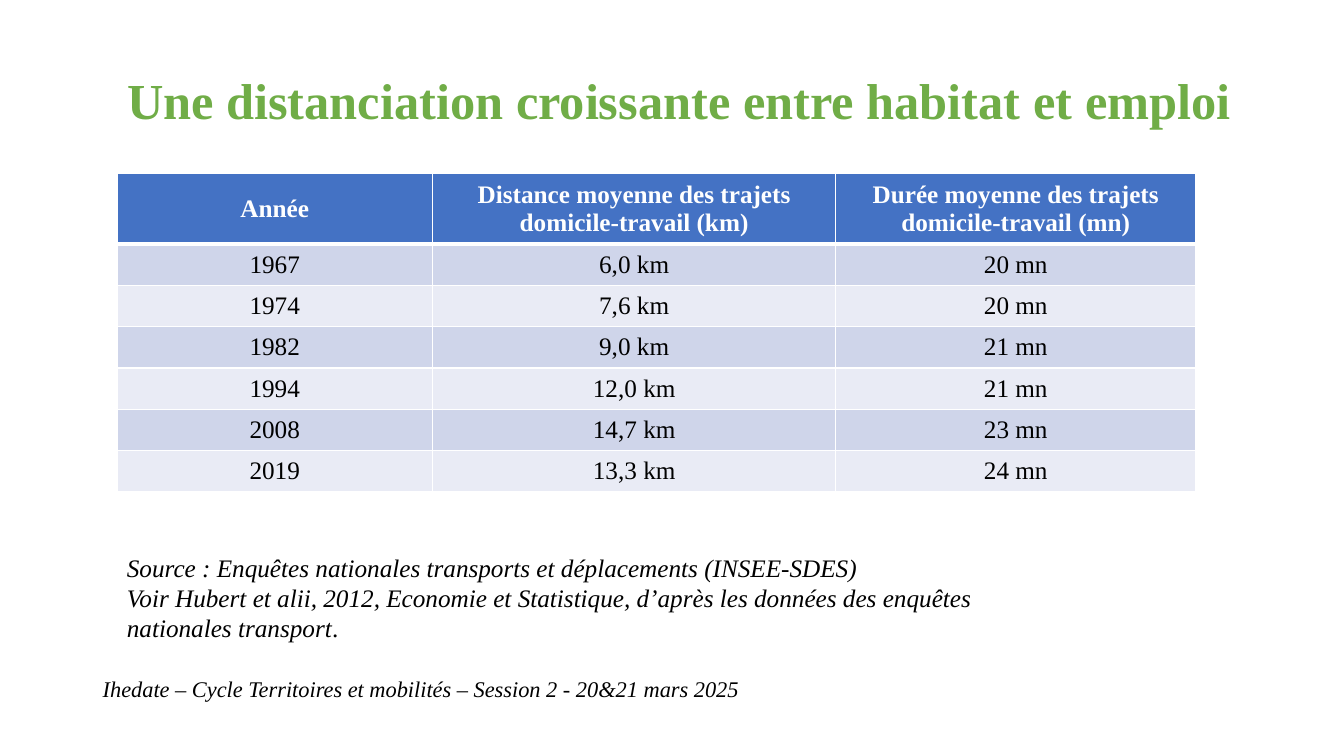
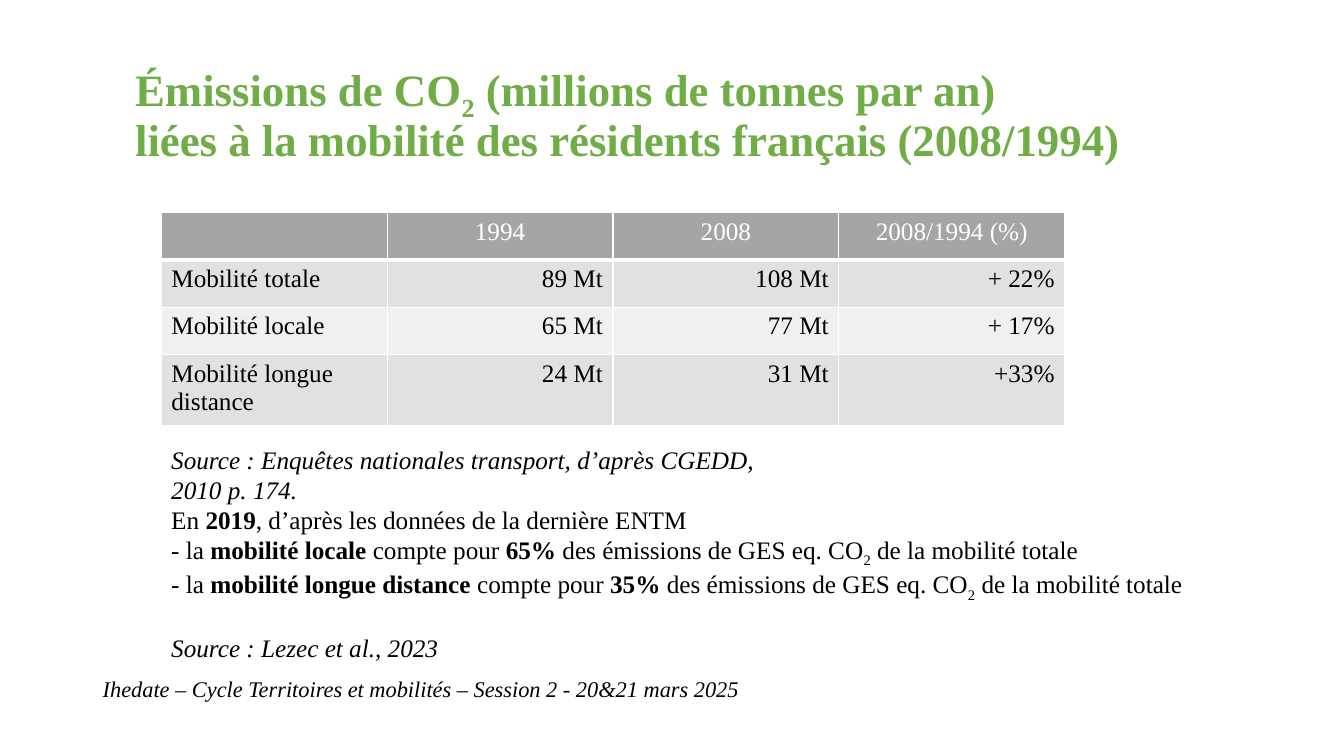
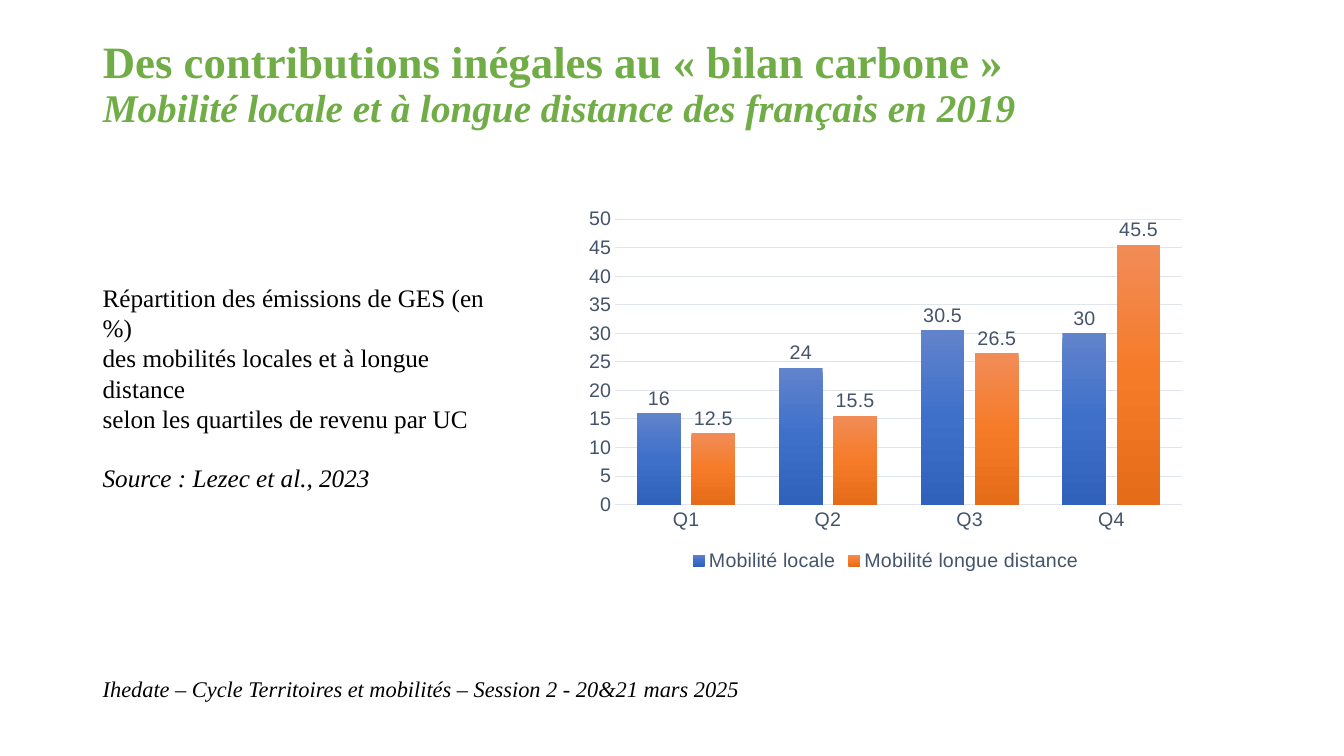
from lxml.etree import SubElement
from pptx import Presentation
from pptx.chart.data import CategoryChartData
from pptx.dml.color import RGBColor
from pptx.enum.chart import XL_CHART_TYPE as ChartType
from pptx.enum.chart import XL_LABEL_POSITION as LabelPosition
from pptx.enum.chart import XL_LEGEND_POSITION as LegendPosition
from pptx.enum.chart import XL_TICK_MARK as TickMark
from pptx.enum.text import MSO_ANCHOR as Anchor
from pptx.enum.text import MSO_AUTO_SIZE as AutoSize
from pptx.enum.text import PP_ALIGN as Align
from pptx.oxml.ns import qn
from pptx.util import Inches, Pt

# Shared look
SERIF, SANS = "Times New Roman", "Arial"
BLACK = RGBColor(0x00, 0x00, 0x00)
WHITE = RGBColor(0xFF, 0xFF, 0xFF)
GREEN = RGBColor(0x70, 0xAD, 0x47)
SLATE = RGBColor(0x44, 0x54, 0x6A)
GRID = RGBColor(0xE0, 0xE5, 0xEB)
# Table palettes: header, odd rows, even rows
BLUES = (RGBColor(0x44, 0x72, 0xC4), RGBColor(0xCF, 0xD5, 0xEA), RGBColor(0xE9, 0xEB, 0xF5))
GREYS = (RGBColor(0xA5, 0xA5, 0xA5), RGBColor(0xE1, 0xE1, 0xE1), RGBColor(0xF0, 0xF0, 0xF0))
# Series gradients, from top to bottom
BLUE_STOPS = (RGBColor(0x61, 0x83, 0xCB), RGBColor(0x3E, 0x70, 0xCA), RGBColor(0x30, 0x62, 0xBB))
ORANGE_STOPS = (RGBColor(0xF1, 0x8C, 0x57), RGBColor(0xF6, 0x7B, 0x28), RGBColor(0xE5, 0x6C, 0x19))

BODY_SIZE = 18
BLANK_LINE = Pt(21)
BOLD, ITALIC, SUBSCRIPT = {"bold": True}, {"italic": True}, {"baseline": -25000}
FOOTER = "Ihedate – Cycle Territoires et mobilités – Session 2 - 20&21 mars 2025"
STUDY = "Source : Lezec et al., 2023"


def set_font(font, size, color, name=SERIF, bold=False, italic=False):
    font.name, font.size, font.bold, font.italic = name, Pt(size), bold, italic
    font.color.rgb = color


def write_runs(paragraph, runs, size, color=BLACK, **style):
    """Write runs, each a string or (string, style); "\\n" is a line break."""
    set_font(paragraph.font, size, color, **style)
    for item in runs:
        if item == "\n":
            paragraph.add_line_break()
            line_break = paragraph._p.findall(qn("a:br"))[-1]
            SubElement(line_break, qn("a:rPr"), sz=str(size * 100))
            continue
        text, changes = (item, {}) if isinstance(item, str) else item
        run = paragraph.add_run()
        run.text = text
        for key, value in changes.items():
            if key == "baseline":
                run._r.get_or_add_rPr().set(key, str(value))
            else:
                setattr(run.font, key, value)


def add_text(slide, box, paragraphs, size=BODY_SIZE, anchor=Anchor.TOP, **style):
    """Add a text box and return its paragraphs."""
    frame = slide.shapes.add_textbox(*map(Inches, box)).text_frame
    frame.word_wrap = True
    frame.vertical_anchor = anchor
    for index, runs in enumerate(paragraphs):
        paragraph = frame.add_paragraph() if index else frame.paragraphs[0]
        write_runs(paragraph, runs, size, **style)
    return frame.paragraphs


def add_slide(presentation, left, top, title_runs, size):
    """Add a slide with its green title and the common footer."""
    slide = presentation.slides.add_slide(presentation.slide_layouts[5])
    title = slide.shapes.title
    title.left, title.top, title.width, title.height = map(Inches, (left, top, 11.5, 0.89))
    frame = title.text_frame
    frame.word_wrap, frame.auto_size = True, AutoSize.NONE
    frame.vertical_anchor = Anchor.MIDDLE
    paragraph = frame.paragraphs[0]
    paragraph.alignment, paragraph.line_spacing = Align.LEFT, 0.9
    write_runs(paragraph, title_runs, size, GREEN, bold=True)
    add_text(slide, (0.92, 6.61, 6.92, 0.45), [[FOOTER]], 16, Anchor.MIDDLE, italic=True)
    return slide


def set_borders(cell, row_index):
    """White rules, thicker between the header and the first row."""
    properties = cell._tc.get_or_add_tcPr()
    thick_edge = {0: "lnB", 1: "lnT"}.get(row_index)
    for position, edge in enumerate(("lnL", "lnR", "lnT", "lnB")):
        width = Pt(3 if edge == thick_edge else 1)
        line = SubElement(properties, qn("a:" + edge), w=str(width))
        SubElement(SubElement(line, qn("a:solidFill")), qn("a:srgbClr"), val=str(WHITE))
        properties.insert(position, line)


def add_table(slide, left, top, widths, heights, rows, palette, alignments, anchor, bold_header):
    """Add a banded table; alignments holds one value per body column."""
    box = map(Inches, (left, top, sum(widths), sum(heights)))
    table = slide.shapes.add_table(len(rows), len(widths), *box).table
    table.first_row = table.horz_banding = False
    for column, width in zip(table.columns, widths):
        column.width = Inches(width)
    for row_index, (texts, height) in enumerate(zip(rows, heights)):
        table.rows[row_index].height = Inches(height)
        is_header = row_index == 0
        for column_index, text in enumerate(texts):
            cell = table.cell(row_index, column_index)
            cell.vertical_anchor = anchor
            cell.fill.solid()
            cell.fill.fore_color.rgb = palette[0 if is_header else 2 - row_index % 2]
            set_borders(cell, row_index)
            paragraph = cell.text_frame.paragraphs[0]
            paragraph.alignment = Align.CENTER if is_header else alignments[column_index]
            write_runs(paragraph, [text] if text else [], BODY_SIZE,
                       WHITE if is_header else BLACK, bold=is_header and bold_header)


def fill_gradient(series, stops):
    gradient = SubElement(series._element.get_or_add_spPr(), qn("a:gradFill"), rotWithShape="1")
    stop_list = SubElement(gradient, qn("a:gsLst"))
    for index, color in enumerate(stops):
        stop = SubElement(stop_list, qn("a:gs"), pos=str(index * 50000))
        SubElement(stop, qn("a:srgbClr"), val=str(color))
    SubElement(gradient, qn("a:lin"), ang="5400000", scaled="0")


def add_column_chart(slide, box, categories, series_list):
    """Add clustered columns; series_list holds (name, values, gradient stops)."""
    data = CategoryChartData()
    data.categories = categories
    for name, values, _ in series_list:
        data.add_series(name, values)
    chart = slide.shapes.add_chart(ChartType.COLUMN_CLUSTERED, *map(Inches, box), data).chart
    chart.has_title = False
    set_font(chart.font, 14, SLATE, SANS)

    chart.has_legend = True
    chart.legend.position = LegendPosition.BOTTOM
    chart.legend.include_in_layout = False
    set_font(chart.legend.font, 14, SLATE, SANS)

    # Axes
    for axis in (chart.category_axis, chart.value_axis):
        axis.major_tick_mark = axis.minor_tick_mark = TickMark.NONE
        set_font(axis.tick_labels.font, 14, SLATE, SANS)
    value_axis = chart.value_axis
    value_axis.minimum_scale, value_axis.maximum_scale, value_axis.major_unit = 0, 50, 5
    value_axis.format.line.fill.background()
    for rule in (chart.category_axis.format.line, value_axis.major_gridlines.format.line):
        rule.color.rgb, rule.width = GRID, Pt(0.75)

    # Columns and their labels
    plot = chart.plots[0]
    plot.gap_width, plot.overlap, plot.vary_by_categories = 100, -24, False
    for series, (_, _, stops) in zip(plot.series, series_list):
        fill_gradient(series, stops)
        labels = series.data_labels
        labels.show_value = True
        labels.position = LabelPosition.OUTSIDE_END
        set_font(labels.font, 14, SLATE, SANS)


def add_distance_slide(presentation):
    slide = add_slide(presentation, 1.16, 0.58,
                      ["Une distanciation croissante entre habitat et emploi"], 36)
    rows = [
        ("Année", "Distance moyenne des trajets domicile-travail (km)",
         "Durée moyenne des trajets domicile-travail (mn)"),
        ("1967", "6,0 km", "20 mn"),
        ("1974", "7,6 km", "20 mn"),
        ("1982", "9,0 km", "21 mn"),
        ("1994", "12,0 km", "21 mn"),
        ("2008", "14,7 km", "23 mn"),
        ("2019", "13,3 km", "24 mn"),
    ]
    add_table(slide, 1.16, 1.72, [3.13, 4, 3.57], [0.65] + [0.41] * 6, rows, BLUES,
              [Align.CENTER] * 3, Anchor.MIDDLE, True)
    add_text(slide, (1.16, 5.43, 9.05, 0.71), [
        ["Source : Enquêtes nationales transports et déplacements (INSEE-SDES)"],
        ["Voir Hubert et alii, 2012, Economie et Statistique, d’après les données des enquêtes "
         "nationales transport", (".", {"italic": False})],
    ], italic=True)


def add_emissions_slide(presentation):
    slide = add_slide(presentation, 1.24, 0.69, [
        "Émissions de CO", ("2", SUBSCRIPT), " (millions de tonnes par an)", "\n",
        "liées à la mobilité des résidents français (2008/1994)"], 32)
    rows = [
        ("", "1994", "2008", "2008/1994 (%)"),
        ("Mobilité totale", "89 Mt", "108 Mt", "+ 22%"),
        ("Mobilité locale", "65 Mt", "77 Mt", "+ 17%"),
        ("Mobilité longue distance", "24 Mt", "31 Mt", "+33%"),
    ]
    add_table(slide, 1.6, 2.11, [2.24] * 4, [0.47] * 3 + [0.66], rows, GREYS,
              [Align.LEFT] + [Align.RIGHT] * 3, Anchor.TOP, False)
    add_text(slide, (1.6, 4.36, 6.36, 0.4),
             [["Source : Enquêtes nationales transport, d’après CGEDD, 2010 p. 174."]], italic=True)
    shares = [
        ["- la ", (f"mobilité {kind} ", BOLD), "compte pour ", (share, BOLD),
         " des émissions de GES eq. CO", ("2", SUBSCRIPT), " de la mobilité totale"]
        for kind, share in (("locale", "65%"), ("longue distance", "35%"))
    ]
    paragraphs = add_text(slide, (1.6, 4.95, 10.54, 1.62), [
        ["En ", ("2019", BOLD), ", d’après les données de la dernière ENTM"],
        *shares,
        [(STUDY, ITALIC)],
    ])
    paragraphs[-1].space_before = BLANK_LINE


def add_contributions_slide(presentation):
    slide = add_slide(presentation, 0.92, 0.4, [
        "Des contributions inégales au « bilan carbone »", "\n",
        ("Mobilité locale et à longue distance des français en 2019",
         {"size": Pt(28), "italic": True})], 32)
    add_column_chart(slide, (5.72, 1.99, 6.13, 3.72), ["Q1", "Q2", "Q3", "Q4"], [
        ("Mobilité locale", (16, 24, 30.5, 30), BLUE_STOPS),
        ("Mobilité longue distance", (12.5, 15.5, 26.5, 45.5), ORANGE_STOPS),
    ])
    paragraphs = add_text(slide, (0.92, 2.75, 4.26, 1.62), [
        ["Répartition des émissions de GES (en %)"],
        ["des mobilités locales et à longue distance"],
        ["selon les quartiles de revenu par UC"],
        [(STUDY, ITALIC)],
    ])
    paragraphs[-1].space_before = BLANK_LINE


def main():
    presentation = Presentation()
    presentation.slide_width, presentation.slide_height = Inches(13.33), Inches(7.5)
    add_distance_slide(presentation)
    add_emissions_slide(presentation)
    add_contributions_slide(presentation)
    presentation.save("out.pptx")


if __name__ == "__main__":
    main()
